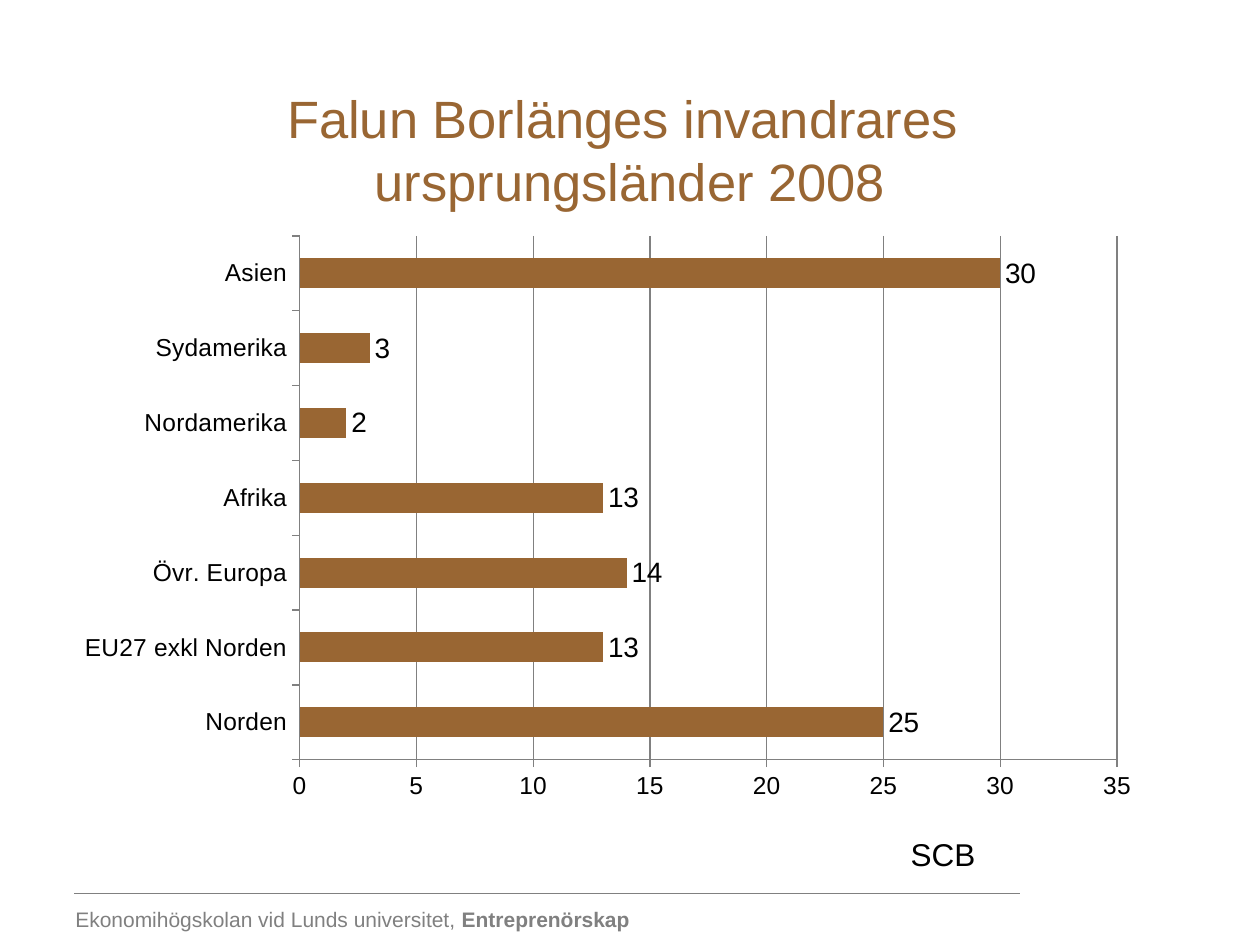
from pptx import Presentation
from pptx.chart.data import CategoryChartData
from pptx.dml.color import RGBColor
from pptx.enum.chart import XL_CHART_TYPE as ChartType, XL_LABEL_POSITION as LabelPosition, XL_TICK_MARK as TickMark
from pptx.enum.shapes import MSO_CONNECTOR as Connector
from pptx.enum.text import MSO_ANCHOR as Anchor, MSO_AUTO_SIZE as AutoSize, PP_ALIGN as Align
from pptx.oxml.ns import qn
from pptx.util import Cm, Pt
from lxml import etree

BROWN, GREY, BLACK = "996633", "808080", "000000"


def set_font(font, size, color):
    font.name = "Arial"
    font.size = Pt(size)
    font.color.rgb = RGBColor.from_string(color)


def add_label(left, top, width, height, runs, size, color):
    box = slide.shapes.add_textbox(Cm(left), Cm(top), Cm(width), Cm(height))
    box.text_frame.word_wrap = False
    box.text_frame.auto_size = AutoSize.SHAPE_TO_FIT_TEXT
    paragraph = box.text_frame.paragraphs[0]
    set_font(paragraph.font, size, color)
    for text, bold in runs:
        run = paragraph.add_run()
        run.text = text
        if bold:
            run.font.bold = True


presentation = Presentation()
presentation.slide_width, presentation.slide_height = Cm(25.4), Cm(19.05)
slide = presentation.slides.add_slide(presentation.slide_layouts[5])

# Footer with rule
add_label(1.27, 18.16, 11.96, 0.76,
          [("Ekonomihögskolan vid Lunds universitet, ", False), ("Entreprenörskap", True)], 12, GREY)
rule = slide.shapes.add_connector(Connector.STRAIGHT, Cm(1.5), Cm(18.01), Cm(20.57), Cm(18.01))
rule.line.color.rgb = RGBColor.from_string(GREY)
rule.line.width = Pt(0.5)
etree.SubElement(rule._element.spPr, qn("a:effectLst"))

# Title
title = slide.shapes.title
title.left, title.top, title.width, title.height = Cm(1.27), Cm(1.42), Cm(22.86), Cm(3.18)
title.text_frame.text = "Falun Borlänges invandrares \vursprungsländer 2008"
title.text_frame.vertical_anchor = Anchor.MIDDLE
title_paragraph = title.text_frame.paragraphs[0]
title_paragraph.alignment = Align.CENTER
set_font(title_paragraph.font, 30, BROWN)

# Bar chart of regions of origin
shares = {"Norden": 25, "EU27 exkl Norden": 13, "Övr. Europa": 14, "Afrika": 13,
          "Nordamerika": 2, "Sydamerika": 3, "Asien": 30}
chart_data = CategoryChartData(number_format="0")
chart_data.categories = list(shares)
chart_data.add_series("Series 1", list(shares.values()))
chart = slide.shapes.add_chart(ChartType.BAR_CLUSTERED, Cm(1.27), Cm(4.52), Cm(21.97), Cm(11.84),
                               chart_data).chart
chart.has_legend = False
chart.has_title = False
set_font(chart.font, 10, BLACK)

# Bars and their values
plot = chart.plots[0]
plot.gap_width = 150
plot.vary_by_categories = False
fill = plot.series[0].format.fill
fill.solid()
fill.fore_color.rgb = RGBColor.from_string(BROWN)
plot.has_data_labels = True
labels = plot.data_labels
labels.show_value = True
labels.position = LabelPosition.OUTSIDE_END
labels.number_format, labels.number_format_is_linked = "0", False
set_font(labels.font, 16, BLACK)

# Axes
value_axis = chart.value_axis
value_axis.minimum_scale, value_axis.maximum_scale, value_axis.major_unit = 0, 35, 5
value_axis.has_major_gridlines = True
value_axis.major_gridlines.format.line.color.rgb = RGBColor.from_string(GREY)
value_axis.tick_labels.number_format = "0"
value_axis.tick_labels.number_format_is_linked = False
for axis in (chart.category_axis, value_axis):
    axis.major_tick_mark = TickMark.OUTSIDE
    axis.minor_tick_mark = TickMark.NONE
    axis.format.line.color.rgb = RGBColor.from_string(GREY)
    set_font(axis.tick_labels.font, 14, BLACK)

# Data credit
add_label(18.11, 16.71, 1.83, 1.02, [("SCB", False)], 18, BLACK)

presentation.save("out.pptx")
